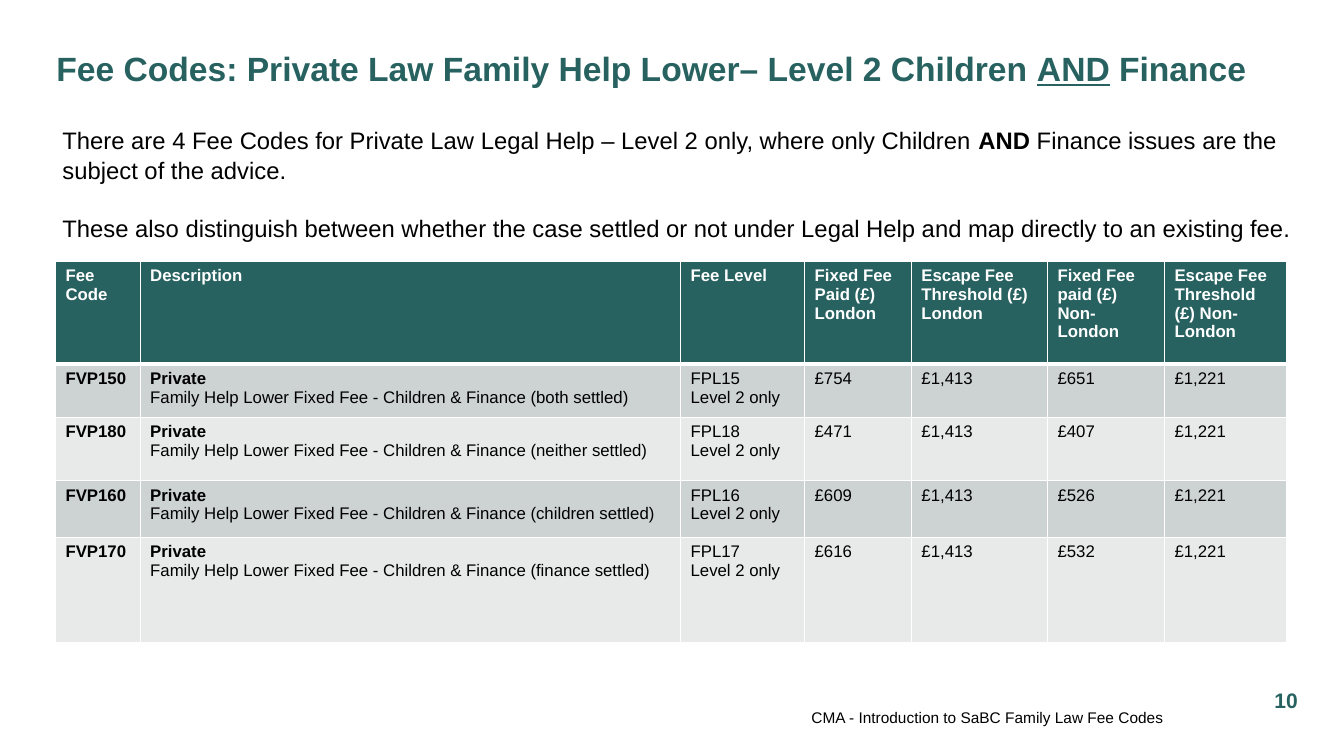
from lxml import etree
from pptx import Presentation
from pptx.dml.color import RGBColor
from pptx.enum.text import MSO_ANCHOR as Anchor, PP_ALIGN as Align
from pptx.oxml.ns import qn
from pptx.util import Inches, Pt

FONT = "Arial"
COLOURS = {"teal": "276160", "white": "FFFFFF", "black": "000000",
           "band_dark": "CDD2D2", "band_light": "E8EAEA"}

COLUMN_WIDTHS = [0.84, 5.36, 1.23, 1.06, 1.35, 1.16, 1.21]
ROW_HEIGHTS = [1.02, 0.53, 0.63, 0.56, 1.05]
HEADINGS = ["Fee Code", "Description", "Fee Level", "Fixed Fee Paid (£) London",
            "Escape Fee Threshold (£) London", "Fixed Fee paid (£) Non-London",
            "Escape Fee Threshold (£) Non-London"]
# Fee code, outcome, fee level, London fee, non-London fee
FEES = [("FVP150", "both", "FPL15", "£754", "£651"),
        ("FVP180", "neither", "FPL18", "£471", "£407"),
        ("FVP160", "children", "FPL16", "£609", "£526"),
        ("FVP170", "finance", "FPL17", "£616", "£532")]
LONDON_THRESHOLD, OTHER_THRESHOLD = "£1,413", "£1,221"


def add_run(paragraph, text, size, colour="black", bold=False, underline=False):
    run = paragraph.add_run()
    run.text = text
    font = run.font
    font.name, font.size, font.bold = FONT, Pt(size), bold
    font.color.rgb = RGBColor.from_string(COLOURS[colour])
    if underline:
        font.underline = True


def paragraph_at(frame, index):
    return frame.add_paragraph() if index else frame.paragraphs[0]


def clear_insets(frame):
    frame.margin_left = frame.margin_right = frame.margin_top = frame.margin_bottom = 0
    frame.vertical_anchor = Anchor.MIDDLE


def add_text_frame(slide, box):
    frame = slide.shapes.add_textbox(*map(Inches, box)).text_frame
    frame.word_wrap = True
    return frame


def place_title(slide, box):
    title = slide.shapes.title
    title.left, title.top, title.width, title.height = map(Inches, box)
    frame = title.text_frame
    clear_insets(frame)
    paragraph = frame.paragraphs[0]
    paragraph.alignment = Align.LEFT
    add_run(paragraph, "Fee Codes: Private Law Family Help Lower– Level 2 Children ",
            24, "teal", bold=True)
    add_run(paragraph, "AND", 24, "teal", bold=True, underline=True)
    add_run(paragraph, " Finance", 24, "teal", bold=True)


def add_introduction(slide, box):
    frame = add_text_frame(slide, box)
    paragraphs = [
        [("There are 4 Fee Codes for Private Law Legal Help – Level 2 only, "
          "where only Children ", False),
         ("AND", True),
         (" Finance issues are the subject of the advice.", False)],
        [("These also distinguish between whether the case settled or not under "
          "Legal Help and map directly to an existing fee.", False)]]
    for index, runs in enumerate(paragraphs):
        paragraph = paragraph_at(frame, index)
        paragraph.line_spacing = 1.05
        if index:
            paragraph.space_before = Pt(20.5)
        for text, bold in runs:
            add_run(paragraph, text, 17, bold=bold)


def set_borders(cell, top, bottom):
    """Draw white borders; top and bottom widths are in points."""
    properties = cell._tc.get_or_add_tcPr()
    for side, width in (("L", 1), ("R", 1), ("T", top), ("B", bottom)):
        line = etree.SubElement(properties, qn(f"a:ln{side}"), w=str(Pt(width)))
        fill = etree.SubElement(line, qn("a:solidFill"))
        etree.SubElement(fill, qn("a:srgbClr"), val=COLOURS["white"])


def fill_cell(cell, lines, background, colour):
    """Write (text, bold) lines, one paragraph each."""
    cell.fill.solid()
    cell.fill.fore_color.rgb = RGBColor.from_string(COLOURS[background])
    for index, (text, bold) in enumerate(lines):
        add_run(paragraph_at(cell.text_frame, index), text, 12, colour, bold)


def fee_row(code, outcome, level, london_fee, other_fee):
    description = f"Family Help Lower Fixed Fee - Children & Finance ({outcome} settled)"
    amounts = (london_fee, LONDON_THRESHOLD, other_fee, OTHER_THRESHOLD)
    return [[(code, True)],
            [("Private", True), (description, False)],
            [(level, False), ("Level 2 only", False)],
            *([(amount, False)] for amount in amounts)]


def add_fee_table(slide, left, top):
    rows = [[[(heading, True)] for heading in HEADINGS]]
    rows += [fee_row(*fee) for fee in FEES]
    table = slide.shapes.add_table(
        len(rows), len(HEADINGS), Inches(left), Inches(top),
        Inches(sum(COLUMN_WIDTHS)), Inches(sum(ROW_HEIGHTS))).table
    for column, width in zip(table.columns, COLUMN_WIDTHS):
        column.width = Inches(width)
    for index, (row, height) in enumerate(zip(rows, ROW_HEIGHTS)):
        table.rows[index].height = Inches(height)
        if index == 0:
            background, colour = "teal", "white"
        else:
            background, colour = ("band_dark" if index % 2 else "band_light"), "black"
        for cell, lines in zip(table.rows[index].cells, row):
            set_borders(cell, top=3 if index == 1 else 1, bottom=3 if index == 0 else 1)
            fill_cell(cell, lines, background, colour)


def add_footer(slide, footer_box, number_box):
    paragraph = add_text_frame(slide, footer_box).paragraphs[0]
    paragraph.alignment = Align.RIGHT
    add_run(paragraph, "CMA - Introduction to SaBC Family Law Fee Codes", 11)

    frame = add_text_frame(slide, number_box)
    clear_insets(frame)
    frame.paragraphs[0].alignment = Align.CENTER
    add_run(frame.paragraphs[0], "10", 15, "teal", bold=True)


def main():
    presentation = Presentation()
    presentation.slide_width, presentation.slide_height = Inches(13.33), Inches(7.5)
    slide = presentation.slides.add_slide(presentation.slide_layouts[5])
    place_title(slide, (0.56, 0.38, 12.31, 0.59))
    add_fee_table(slide, 0.55, 2.59)
    add_introduction(slide, (0.52, 1.18, 12.49, 1.25))
    add_footer(slide, (4.97, 6.98, 6.67, 0.29), (12.51, 6.75, 0.49, 0.4))
    presentation.save("out.pptx")


if __name__ == "__main__":
    main()
